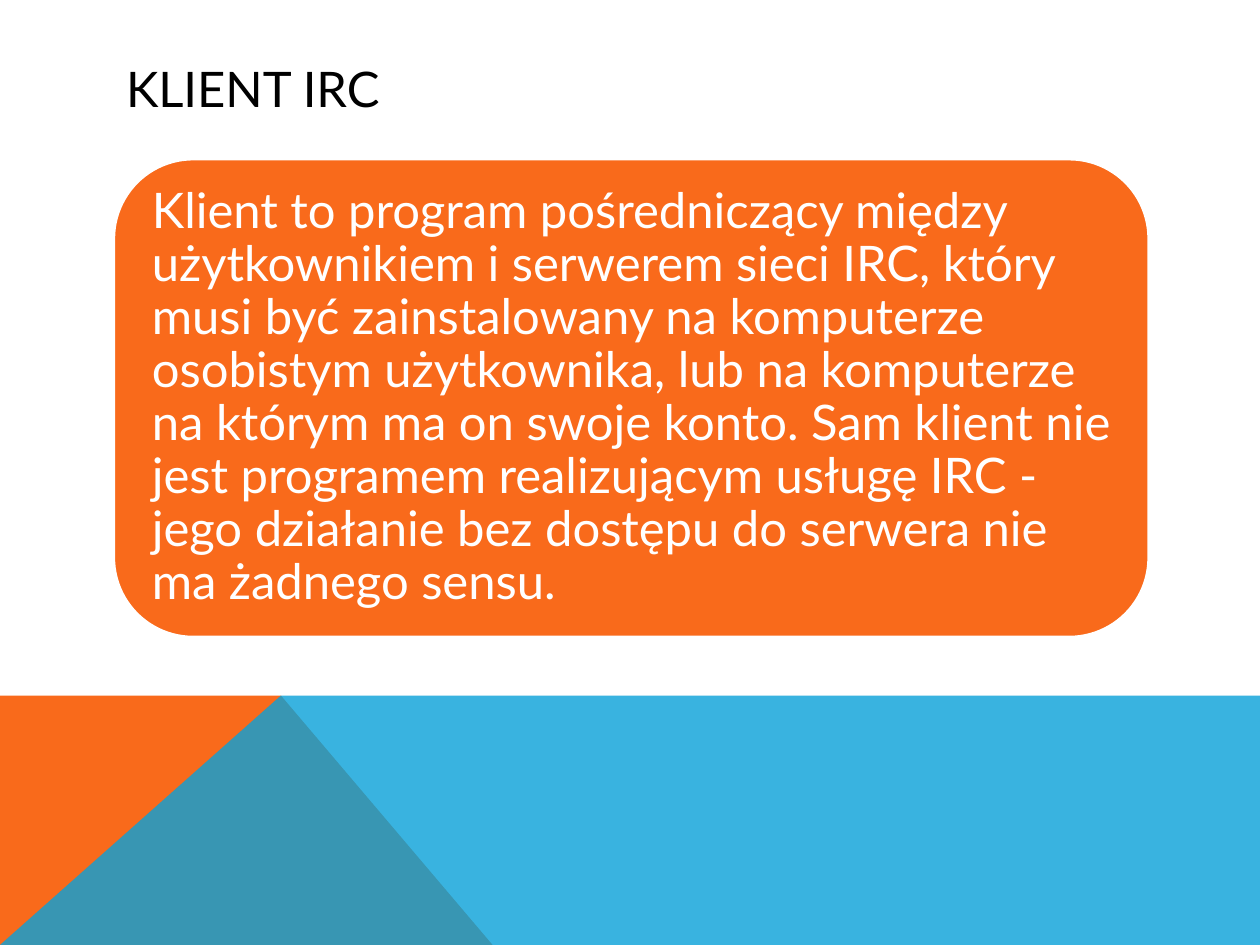
from dataclasses import dataclass

from lxml import etree
from pptx import Presentation
from pptx.dml import color
from pptx.enum import shapes, text
from pptx.oxml import ns
from pptx.util import Inches, Pt


@dataclass(frozen=True)
class Theme:
    font: str = "Lato"
    size: int = 28
    dark: str = "000000"
    light: str = "FFFFFF"
    warm: str = "F96A1B"
    cool: str = "08A1D9"


THEME = Theme()
WIDE, HIGH = 10, 7.5
LEFT, SPAN = 0.9, 8.22
TOP, PEAK, FOOT = 5.52, 2.23, 3.91

TITLE = "KLIENT IRC"
BODY = (
    "Klient to program pośredniczący między użytkownikiem i serwerem sieci IRC, "
    "który musi być zainstalowany na komputerze osobistym użytkownika, lub na "
    "komputerze na którym ma on swoje konto. Sam klient nie jest programem "
    "realizującym usługę IRC - jego działanie bez dostępu do serwera nie ma "
    "żadnego sensu."
)


def rgb(tone):
    return color.RGBColor.from_string(tone)


def write(shape, words, tone, inset=0.1, lead=1.0):
    frame = shape.text_frame
    frame.word_wrap = True
    frame.auto_size = text.MSO_AUTO_SIZE.NONE
    frame.vertical_anchor = text.MSO_ANCHOR.MIDDLE
    frame.margin_left = frame.margin_right = Inches(inset)
    frame.margin_top = frame.margin_bottom = Inches(inset)
    para = frame.paragraphs[0]
    para.alignment = text.PP_ALIGN.LEFT
    para.line_spacing = lead
    run = para.add_run()
    run.text = words
    run.font.name = THEME.font
    run.font.size = Pt(THEME.size)
    run.font.color.rgb = rgb(tone)


def paint(shape, tone, alpha=100):
    shape.shadow.inherit = False
    shape.fill.solid()
    shape.fill.fore_color.rgb = rgb(tone)
    shape.line.fill.background()
    if alpha < 100:
        hue = shape.fill._xPr.find(".//" + ns.qn("a:srgbClr"))
        etree.SubElement(hue, ns.qn("a:alpha")).set("val", str(alpha * 1000))


def band(slide, points, tone, alpha=100):
    start, *rest = [(Inches(x), Inches(y)) for x, y in points]
    pen = slide.shapes.build_freeform(*start)
    pen.add_line_segments(rest, close=True)
    paint(pen.convert_to_shape(), tone, alpha)


def head(slide, words):
    title = slide.shapes.title
    title.left, title.top = Inches(LEFT), Inches(0.4)
    title.width, title.height = Inches(SPAN), Inches(0.6)
    write(title, words, THEME.dark)


def card(slide, words):
    box = slide.shapes.add_shape(
        shapes.MSO_SHAPE.ROUNDED_RECTANGLE,
        Inches(LEFT), Inches(1.26), Inches(SPAN), Inches(3.8),
    )
    paint(box, THEME.warm)
    box.line.color.rgb = rgb(THEME.light)
    box.line.width = Pt(2)
    write(box, words, THEME.light, inset=0.12, lead=0.9)


def main():
    deck = Presentation()
    deck.slide_width, deck.slide_height = Inches(WIDE), Inches(HIGH)
    slide = deck.slides.add_slide(deck.slide_layouts[5])
    band(slide, [(0, HIGH), (0, TOP), (PEAK, TOP), (FOOT, HIGH)], THEME.warm)
    band(slide, [(0, HIGH), (PEAK, TOP), (WIDE, TOP), (WIDE, HIGH)], THEME.cool, 80)
    head(slide, TITLE)
    card(slide, BODY)
    deck.save("out.pptx")


if __name__ == "__main__":
    main()
